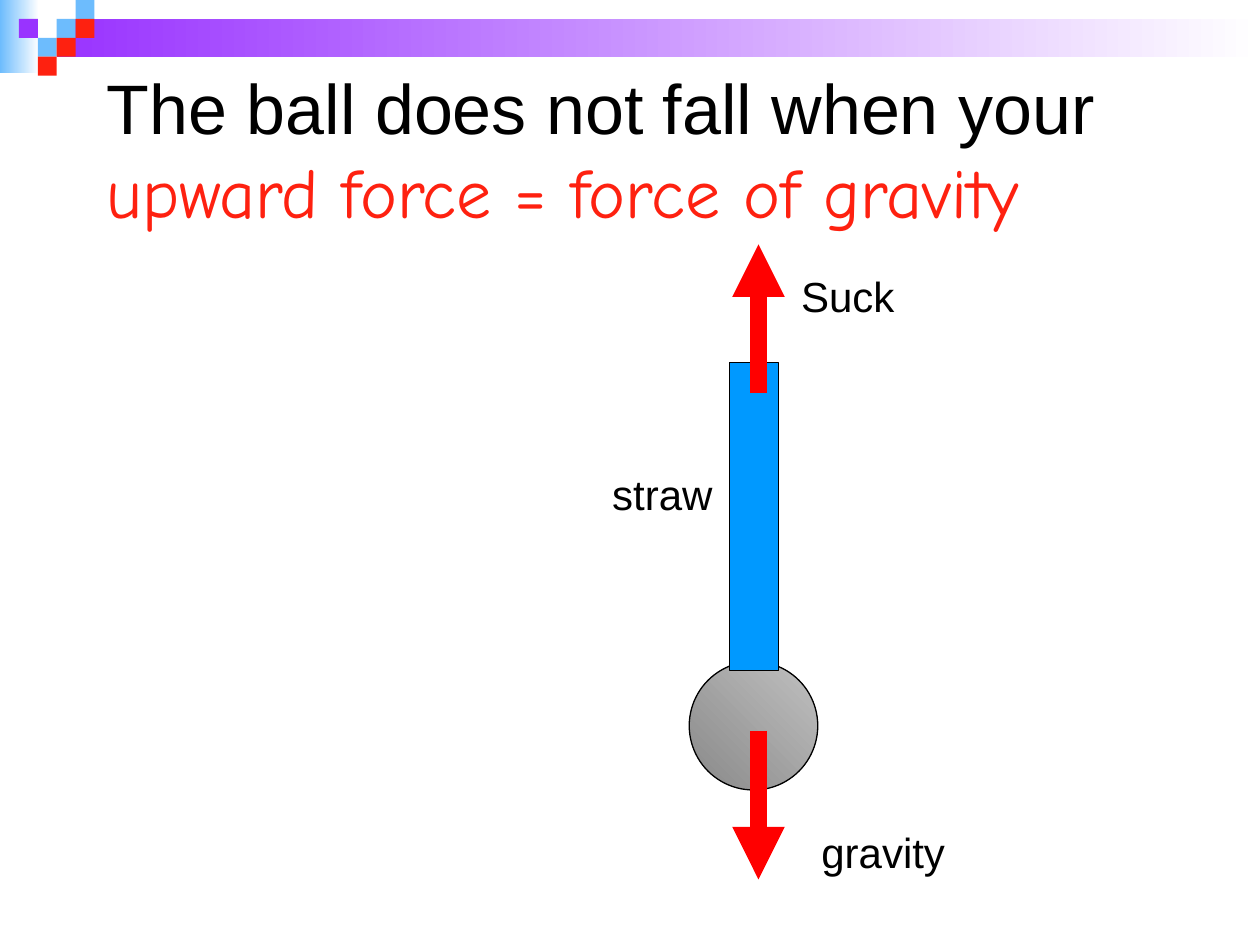
from lxml import etree
from pptx import Presentation
from pptx.dml.color import RGBColor as RGB
from pptx.enum.shapes import MSO_CONNECTOR as LINK, MSO_SHAPE as KIND
from pptx.enum.text import MSO_ANCHOR as ANCHOR
from pptx.oxml.ns import qn
from pptx.util import Inches, Pt

HUES = {
    "black": "000000", "white": "FFFFFF", "sky": "6DBCFD", "violet": "9933FF",
    "red": "FE2110", "arrow": "FF0000", "straw": "0099FF",
    "dark": "898989", "light": "C0C0C0",
}
HUE = {name: RGB.from_string(code) for name, code in HUES.items()}

deck = Presentation()
deck.slide_width, deck.slide_height = Inches(10), Inches(7.5)
slide = deck.slides.add_slide(deck.slide_layouts[6])
shapes = slide.shapes


def add_form(kind, box, *hues, angle=0, edge=False):
    """Draw a shape; one hue fills it flat, two fill it with a gradient."""
    form = shapes.add_shape(kind, *map(Inches, box))
    form.shadow.inherit = False
    if len(hues) == 1:
        form.fill.solid()
        form.fill.fore_color.rgb = HUE[hues[0]]
    else:
        form.fill.gradient()
        form.fill.gradient_angle = angle
        for stop, hue, spot in zip(form.fill.gradient_stops, hues, (0, 1)):
            stop.color.rgb = HUE[hue]
            stop.position = spot
    if edge:
        form.line.color.rgb = HUE["black"]
        form.line.width = Pt(0.75)
    else:
        form.line.fill.background()


def add_text(box, *runs, size=24, anchor=ANCHOR.TOP):
    """Add a text box; each run is (words, font, hue)."""
    frame = shapes.add_textbox(*map(Inches, box)).text_frame
    frame.word_wrap = True
    frame.vertical_anchor = anchor
    for words, font, hue in runs:
        run = frame.paragraphs[0].add_run()
        run.text = words
        run.font.name = font
        run.font.size = Pt(size)
        run.font.color.rgb = HUE[hue]


# Corner banner with its checkered squares
add_form(KIND.RECTANGLE, (0, 0, 0.31, 0.58), "sky", "white")
add_form(KIND.RECTANGLE, (0.45, 0.15, 9.55, 0.3), "violet", "white")
side = 0.15
squares = [(3, 1, "sky"), (4, 0, "sky"), (4, 1, "red"), (2, 2, "sky"),
           (1, 1, "violet"), (3, 2, "red"), (2, 3, "red")]
for col, row, hue in squares:
    add_form(KIND.RECTANGLE, (col * side, row * side, side, side), hue)

add_text((0.75, 0.5, 8.75, 1.36),
         ("The ball does not fall when your ", "Arial", "black"),
         ("upward force = force of gravity", "Comic Neue", "red"),
         size=40, anchor=ANCHOR.MIDDLE)

# Ball held by the straw
add_form(KIND.OVAL, (5.47, 5.25, 1.02, 1.02), "dark", "light", angle=45, edge=True)
add_form(KIND.RECTANGLE, (5.79, 2.88, 0.39, 2.44), "straw", edge=True)

# Forces: gravity down, suction up
mid, reach = 6.02, 1.18
for start, end in ((5.8, 5.8 + reach), (3.12, 3.12 - reach)):
    force = shapes.add_connector(LINK.STRAIGHT, Inches(mid), Inches(start),
                                 Inches(mid), Inches(end))
    force.line.color.rgb = HUE["arrow"]
    force.line.width = Pt(10)
    etree.SubElement(force.line._get_or_add_ln(), qn("a:tailEnd"), type="triangle")
    etree.SubElement(force._element.spPr, qn("a:effectLst"))

labels = {"straw": (4.76, 3.67, 1.02), "Suck": (6.26, 2.1, 1.18),
          "gravity": (6.42, 6.51, 1.81)}
for words, box in labels.items():
    add_text((*box, 0.5), (words, "Arial", "black"))

deck.save("out.pptx")
